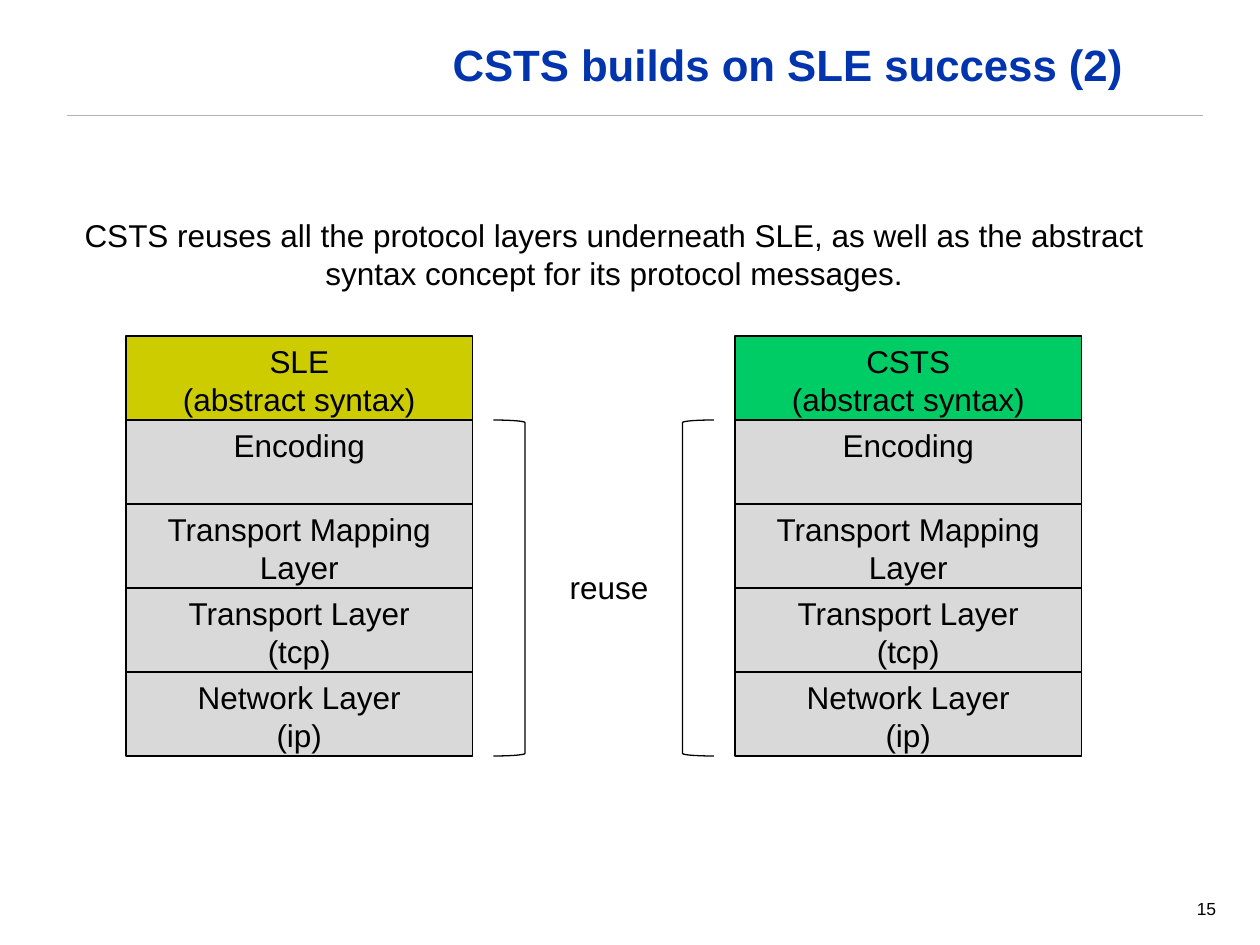
from lxml.etree import SubElement
from pptx import Presentation
from pptx.dml.color import RGBColor
from pptx.enum.shapes import MSO_CONNECTOR as Link, MSO_SHAPE as Kind
from pptx.enum.text import MSO_ANCHOR as Anchor, PP_ALIGN as Align
from pptx.oxml.ns import qn
from pptx.util import Pt

BLACK, GREY, WHITE = "000000", "D9D9D9", "FFFFFF"
LAYERS = [
    ["Encoding"],
    ["Transport Mapping Layer"],
    ["Transport Layer", "(tcp)"],
    ["Network Layer", "(ip)"],
]


def color(code):
    """Turn a hex string into a colour."""
    return RGBColor.from_string(code)


def write(shape, lines, size=18, hue=BLACK, bold=False, align=Align.CENTER, gap=1.0):
    """Fill a shape with one paragraph per line, from the top."""
    frame = shape.text_frame
    frame.word_wrap = True
    frame.vertical_anchor = Anchor.TOP
    for i, line in enumerate(lines):
        para = frame.add_paragraph() if i else frame.paragraphs[0]
        para.alignment = align
        para.line_spacing = gap
        para.space_before = Pt(0)
        run = para.add_run()
        run.text = line
        font = run.font
        font.name, font.size, font.bold = "Arial", Pt(size), bold
        font.color.rgb = color(hue)


def label(slide, box, text, **style):
    """Add a text box with a single paragraph."""
    write(slide.shapes.add_textbox(*map(Pt, box)), [text], **style)


def outline(slide, kind, box, fill):
    """Add a filled shape with a thin black edge."""
    shape = slide.shapes.add_shape(kind, *map(Pt, box))
    shape.shadow.inherit = False
    shape.fill.solid()
    shape.fill.fore_color.rgb = color(fill)
    shape.line.color.rgb = color(BLACK)
    shape.line.width = Pt(0.75)
    return shape


def header(slide, box, text):
    """Place the title in its box and the rule below it."""
    title = slide.shapes.title
    title.left, title.top, title.width, title.height = map(Pt, box)
    write(title, [text], size=25, hue="0234AD", bold=True, gap=0.9)
    rule = slide.shapes.add_connector(Link.STRAIGHT, Pt(38.2), Pt(66), Pt(687.5), Pt(66))
    rule.line.color.rgb = color("B2B2B2")
    rule.line.width = Pt(0.13)
    SubElement(rule._element.spPr, qn("a:effectLst"))


def stack(slide, box, name, fill):
    """Draw a protocol stack with its own layer above the shared ones."""
    left, top, width, height = box
    rows = [[name, "(abstract syntax)"]] + LAYERS
    step = height / len(rows)
    for i, lines in enumerate(rows):
        part = (left, top + i * step, width, step)
        write(outline(slide, Kind.RECTANGLE, part, GREY if i else fill), lines)


def reuse(slide, box):
    """Draw the two brackets at the ends of a box and the word between."""
    left, top, width, height = box
    span = 18
    sides = [(Kind.RIGHT_BRACKET, left), (Kind.LEFT_BRACKET, left + width - span)]
    for kind, x in sides:
        shape = outline(slide, kind, (x, top, span, height), WHITE)
        shape.adjustments[0] = 0.08
    label(slide, (left + 30, top + 81, 72, 27), "reuse")


def main():
    """Build the slide and save it."""
    deck = Presentation()
    deck.slide_width, deck.slide_height = Pt(720), Pt(540)
    slide = deck.slides.add_slide(deck.slide_layouts[5])
    header(slide, (126, 21.6, 648, 90), "CSTS builds on SLE success (2)")
    label(slide, (30, 120, 642, 47), "CSTS reuses all the protocol layers underneath SLE, "
          "as well as the abstract syntax concept for its protocol messages.")
    stack(slide, (72, 192, 198, 240), "SLE", "CCCC00")
    stack(slide, (420, 192, 198, 240), "CSTS", "00CC66")
    reuse(slide, (282, 240, 126, 192))
    label(slide, (534, 509.5, 168, 18), "15", size=10, align=Align.RIGHT)
    deck.save("out.pptx")


if __name__ == "__main__":
    main()
